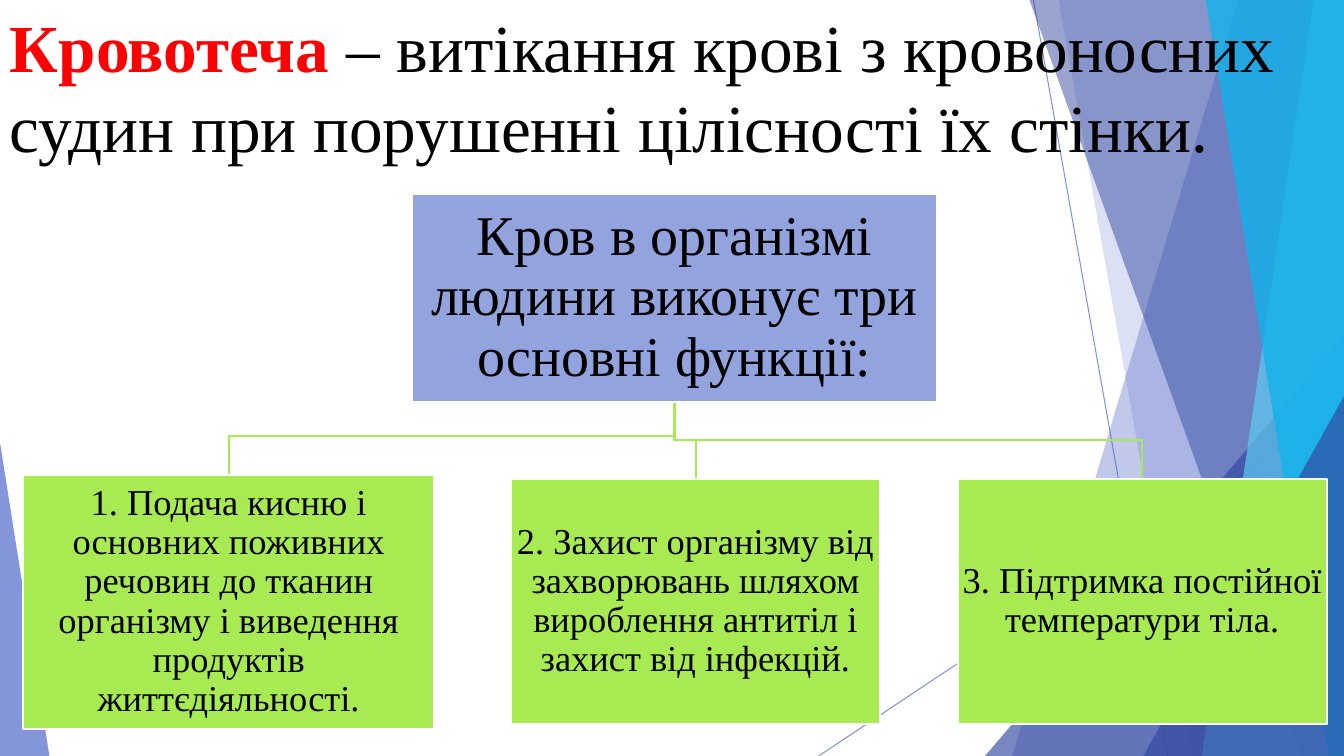
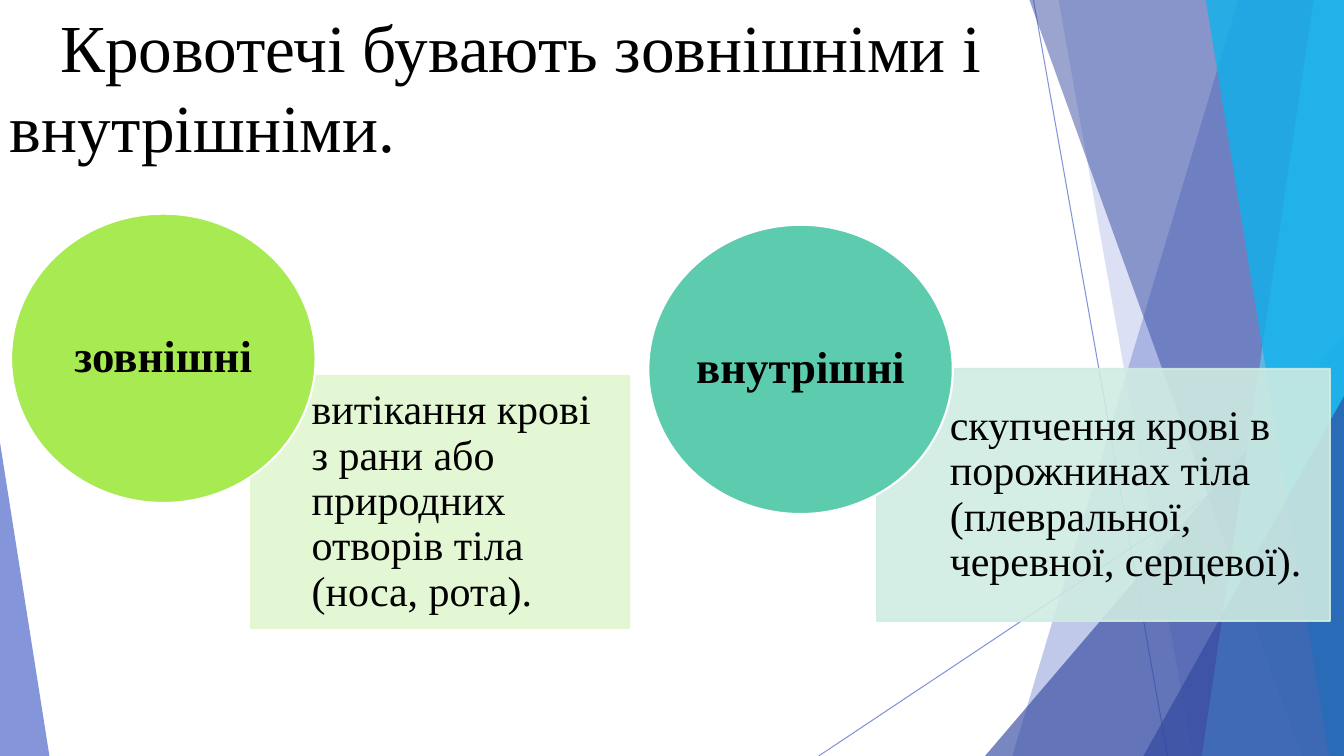
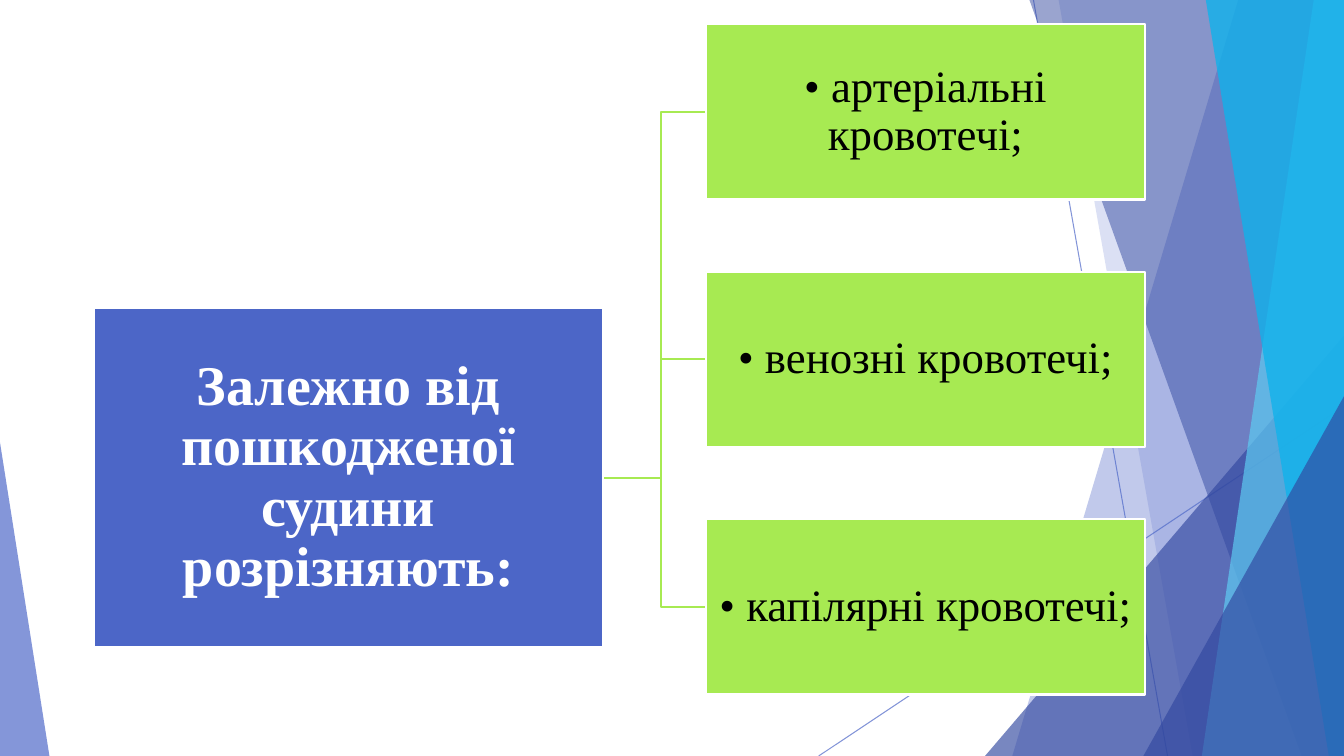
from pptx import Presentation as Deck
from pptx.dml.color import RGBColor as Rgb
from pptx.enum.shapes import MSO_CONNECTOR as Link, MSO_SHAPE as Kind
from pptx.enum.text import MSO_ANCHOR as Anchor, PP_ALIGN as Align
from pptx.oxml.ns import qn
from pptx.util import Inches, Pt
from lxml.etree import SubElement as Sub

WIDE, HIGH = 13.33, 7.5
FACE = "Times New Roman"
HUES = {
    "black": "000000", "white": "FFFFFF", "red": "FF0000",
    "blue": "4E67C8", "navy": "31479F", "sky": "5ECCF3", "cyan": "11B2EB",
    "lime": "A7EA52", "teal": "5DCCAE", "lilac": "93A3DE", "royal": "4C66C7",
    "mint": "E1F7CF", "foam": "CFECE2",
}


def hue(name):
    return Rgb.from_string(HUES[name])


def fade(shape, share):
    for tone in shape._element.spPr.iter(qn("a:srgbClr")):
        Sub(tone, qn("a:alpha"), val=str(share * 1000))


def paint(shape, fill=None, edge=None, share=100):
    shape.shadow.inherit = False
    if fill:
        shape.fill.solid()
        shape.fill.fore_color.rgb = hue(fill)
    else:
        shape.fill.background()
    if edge:
        shape.line.color.rgb = hue(edge)
        shape.line.width = Pt(1.5)
    else:
        shape.line.fill.background()
    if share < 100:
        fade(shape, share)


def write(para, text, size, tone="black", bold=False):
    run = para.add_run()
    run.text = text
    look = {"name": FACE, "size": Pt(size), "bold": bold}
    for key, val in look.items():
        setattr(run.font, key, val)
    run.font.color.rgb = hue(tone)


def pad(frame, pads):
    sides = ("left", "top", "right", "bottom")
    for side, gap in zip(sides, pads):
        setattr(frame, f"margin_{side}", Inches(gap))


def box(slide, area, text, size, fill, edge="white", kind=Kind.RECTANGLE,
        share=100, pads=(0.02,) * 4, align=Align.CENTER, tone="black", bold=False):
    shape = slide.shapes.add_shape(kind, *map(Inches, area))
    paint(shape, fill, edge, share)
    frame = shape.text_frame
    pad(frame, pads)
    for key, val in {"word_wrap": True, "vertical_anchor": Anchor.MIDDLE}.items():
        setattr(frame, key, val)
    para = frame.paragraphs[0]
    for key, val in {"alignment": align, "line_spacing": 0.9}.items():
        setattr(para, key, val)
    write(para, text, size, tone, bold)


def title(slide, parts, high, indent=0):
    frame = slide.shapes.add_textbox(0, 0, Inches(13.15), Inches(high)).text_frame
    frame.word_wrap = True
    pad(frame, (0.1, 0.05, 0.1, 0.05))
    para = frame.paragraphs[0]
    para._p.get_or_add_pPr().set("indent", str(Inches(indent)))
    for text, tone, bold in parts:
        write(para, text, 48, tone, bold)


def trace(slide, spots, close):
    first, *rest = [tuple(map(Inches, spot)) for spot in spots]
    pen = slide.shapes.build_freeform(*first, scale=1.0)
    pen.add_line_segments(rest, close=close)
    return pen.convert_to_shape()


def branch(slide, spots):
    paint(trace(slide, spots, False), edge="lime")


def sheet(slide, top, base, tone, share):
    spots = [(top, 0), (WIDE, 0), (WIDE, HIGH), (base, HIGH)]
    paint(trace(slide, spots, True), tone, share=share)


def wedge(slide, left, top, wide, tip, tone, share):
    area = (left, top, wide, HIGH - top)
    shape = slide.shapes.add_shape(Kind.ISOSCELES_TRIANGLE, *map(Inches, area))
    shape.adjustments[0] = tip
    paint(shape, tone, share=share)


def ray(slide, *ends):
    line = slide.shapes.add_connector(Link.STRAIGHT, *map(Inches, ends))
    line.line.color.rgb = hue("blue")
    line.line.width = Pt(0.75)
    fade(line, 69)
    Sub(line._element.spPr, qn("a:effectLst"))


def page(deck):
    slide = deck.slides.add_slide(deck.slide_layouts[6])
    ray(slide, 10.25, 0, 11.58, HIGH)
    ray(slide, WIDE, 4.03, 8.12, HIGH)
    sheet(slide, 12.28, 10.04, "blue", 35)
    sheet(slide, 10.5, 11.83, "blue", 20)
    wedge(slide, 9.77, 3.33, 3.56, 1, "navy", 65)
    sheet(slide, 10.21, 12.91, "navy", 49)
    sheet(slide, 13.03, 11.92, "sky", 69)
    sheet(slide, 11.96, 13.18, "cyan", 80)
    wedge(slide, 11.34, 3.93, 1.99, 1, "navy", 65)
    wedge(slide, 0, 4.39, 0.49, 0, "blue", 69)
    return slide


def roles(deck):
    slide = page(deck)
    title(slide, [
        ("Кровотеча", "red", True),
        (" – витікання крові з кровоносних судин при порушенні цілісності їх стінки.",
         "black", False),
    ], 2.89)
    cards = [
        ((0.23, 4.71, 4.08, 2.52), "1. Подача кисню і основних поживних речовин "
         "до тканин організму і виведення продуктів життєдіяльності."),
        ((5.07, 4.75, 3.66, 2.43), "2. Захист організму від захворювань шляхом "
         "вироблення антитіл і захист від інфекцій."),
        ((9.5, 4.75, 3.66, 2.43), "3. Підтримка постійної температури тіла."),
    ]
    stem = 6.69
    for (left, top, wide, _), _ in reversed(cards):
        mid, bend = left + wide / 2, top - 0.38
        branch(slide, [(stem, 3.98), (stem, bend), (mid, bend), (mid, top)])
    box(slide, (4.09, 1.92, 5.2, 2.07), "Кров в організмі людини виконує три основні функції:",
        40, "lilac", pads=(0.03,) * 4)
    for area, text in cards:
        box(slide, area, text, 26, "lime")


def kinds(deck):
    slide = page(deck)
    title(slide, [("Кровотечі бувають зовнішніми і внутрішніми.", "black", False)], 1.68, 0.5)
    pairs = [
        ((2.49, 3.73, 3.75, 2.5), 0.6, "mint",
         "витікання крові з рани або природних отворів тіла (носа, рота).",
         (0.11, 2.12), "lime", "зовнішні"),
        ((8.7, 3.66, 4.49, 2.5), 0.72, "foam",
         "скупчення крові в порожнинах тіла (плевральної, черевної, серцевої).",
         (6.43, 2.23), "teal", "внутрішні"),
    ]
    for area, inset, pale, text, spot, tone, name in pairs:
        box(slide, area, text, 30, pale, pale, share=89,
            pads=(inset, 0.23, 0.23, 0.23), align=Align.LEFT)
        box(slide, (*spot, 3.02, 2.87), name, 32, tone, kind=Kind.OVAL,
            pads=(0,) * 4, bold=True)


def types(deck):
    slide = page(deck)
    left, wide, high = 7, 4.36, 1.74
    names = ["• артеріальні кровотечі;", "• венозні кровотечі;", "• капілярні кровотечі;"]
    tops = [0.24 + 2.455 * row for row in range(len(names))]
    root, bend = 4.74, 6.56
    for top in reversed(tops):
        mid = top + high / 2
        branch(slide, [(5.99, root), (bend, root), (bend, mid), (left, mid)])
    box(slide, (0.93, 3.06, 5.05, 3.36), "Залежно від пошкодженої судини розрізняють:",
        40, "royal", pads=(0.03,) * 4, tone="white", bold=True)
    for top, name in zip(tops, names):
        box(slide, (left, top, wide, high), name, 32, "lime")


def main():
    deck = Deck()
    deck.slide_width, deck.slide_height = Inches(WIDE), Inches(HIGH)
    for build in (roles, kinds, types):
        build(deck)
    deck.save("out.pptx")


if __name__ == "__main__":
    main()
